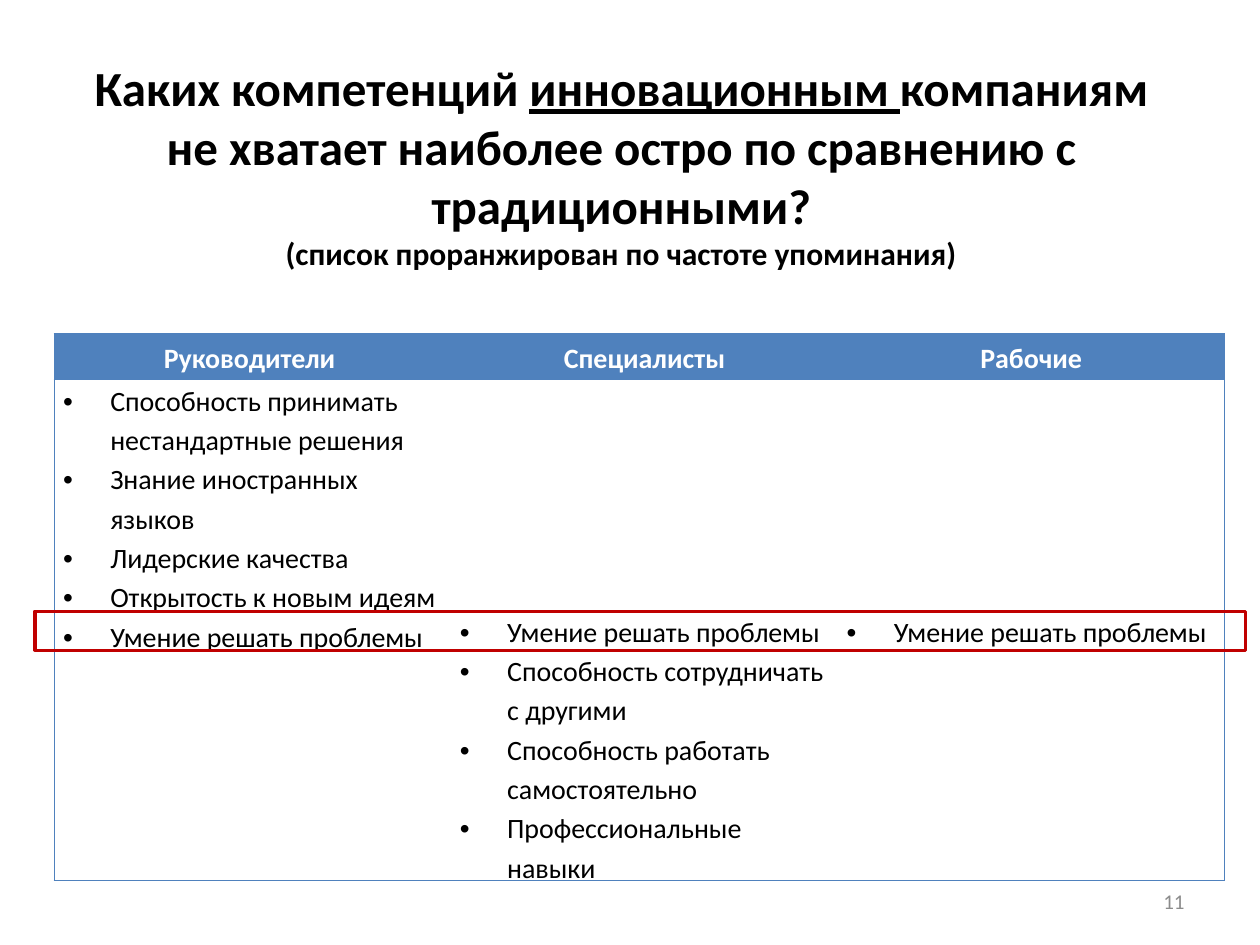
from lxml import etree
from pptx import Presentation
from pptx.dml.color import RGBColor
from pptx.enum.shapes import MSO_SHAPE
from pptx.enum.text import MSO_ANCHOR, MSO_AUTO_SIZE, PP_ALIGN
from pptx.oxml.ns import qn
from pptx.util import Pt

RECT = MSO_SHAPE.RECTANGLE
MIDDLE, TOP = MSO_ANCHOR.MIDDLE, MSO_ANCHOR.TOP
CENTER, LEFT, RIGHT = PP_ALIGN.CENTER, PP_ALIGN.LEFT, PP_ALIGN.RIGHT
NO_FIT = MSO_AUTO_SIZE.NONE

FONT = "Calibri"
HEX = {"blue": "4F81BD", "red": "C00000", "gray": "8C8C8C",
       "black": "000000", "white": "FFFFFF"}

TITLE = [
    (28, [("Каких компетенций ", False), ("инновационным ", True),
          ("компаниям не хватает наиболее остро по сравнению с традиционными?", False)]),
    (18, [("(список проранжирован по частоте упоминания)", False)]),
]
SKILLS = [
    ("Руководители ", 0, [
        "Способность принимать нестандартные решения",
        "Знание иностранных языков",
        "Лидерские качества",
        "Открытость к новым идеям",
        "Умение решать проблемы"]),
    ("Специалисты", 132, [
        "Умение решать проблемы",
        "Способность сотрудничать с другими",
        "Способность работать самостоятельно",
        "Профессиональные навыки"]),
    ("Рабочие", 132, ["Умение решать проблемы"]),
]
PAGE = "11"
WIDTHS = [226.8, 221, 221]
HEIGHTS = [26, 286]
INDENT = 27


def color(name):
    return RGBColor.from_string(HEX[name])


def style(run, size, tint, bold=False, under=False):
    font = run.font
    font.name, font.size, font.bold = FONT, Pt(size), bold
    font.underline = under
    font.color.rgb = color(tint)


def edge(cell, sides):
    props = cell._tc.get_or_add_tcPr()
    for spot, side in enumerate("LRTB"):
        line = etree.Element(qn("a:ln" + side), w=str(Pt(1)))
        if side in sides:
            fill = etree.SubElement(line, qn("a:solidFill"))
            etree.SubElement(fill, qn("a:srgbClr"), val=HEX["blue"])
        else:
            etree.SubElement(line, qn("a:noFill"))
        props.insert(spot, line)


def bullet(para):
    props = para._p.get_or_add_pPr()
    props.set("marL", str(Pt(INDENT)))
    props.set("indent", str(-Pt(INDENT)))
    etree.SubElement(props, qn("a:buFont"), typeface="Arial")
    etree.SubElement(props, qn("a:buChar"), char="•")


def fill_cell(cell, lines, head, drop, sides):
    cell.margin_left = cell.margin_right = Pt(5)
    cell.margin_top, cell.margin_bottom = Pt(drop), Pt(0)
    cell.vertical_anchor = MIDDLE if head else TOP
    if head:
        cell.fill.solid()
        cell.fill.fore_color.rgb = color("blue")
    else:
        cell.fill.background()
    edge(cell, sides)
    frame = cell.text_frame
    frame.text = "\n".join(lines)
    for para in frame.paragraphs:
        para.line_spacing = 1.15
        para.alignment = CENTER if head else LEFT
        if head:
            para.space_after = Pt(6)
        else:
            bullet(para)
        style(para.runs[0], 16, "white" if head else "black", head)


def add_title(slide):
    title = slide.shapes.title
    title.left, title.top, title.width, title.height = Pt(31), Pt(49), Pt(648), Pt(90)
    frame = title.text_frame
    frame.auto_size, frame.vertical_anchor = NO_FIT, MIDDLE
    for row, (size, parts) in enumerate(TITLE):
        para = frame.add_paragraph() if row else frame.paragraphs[0]
        para.alignment = CENTER
        for text, under in parts:
            run = para.add_run()
            run.text = text
            style(run, size, "black", True, under)


def add_grid(slide):
    grid = slide.shapes.add_table(len(HEIGHTS), len(SKILLS), Pt(31), Pt(190.8),
                                  Pt(sum(WIDTHS)), Pt(sum(HEIGHTS))).table
    for row, high in zip(grid.rows, HEIGHTS):
        row.height = Pt(high)
    last = len(SKILLS) - 1
    for col, (head, drop, items) in enumerate(SKILLS):
        grid.columns[col].width = Pt(WIDTHS[col])
        sides = "TB" + ("L" if col == 0 else "") + ("R" if col == last else "")
        fill_cell(grid.cell(0, col), [head], True, 0, sides)
        fill_cell(grid.cell(1, col), items, False, drop, sides)


def add_page(slide):
    box = slide.shapes.add_textbox(Pt(516), Pt(500.5), Pt(168), Pt(28.8))
    frame = box.text_frame
    frame.word_wrap, frame.vertical_anchor = True, MIDDLE
    frame.text = PAGE
    para = frame.paragraphs[0]
    para.alignment = RIGHT
    style(para.runs[0], 12, "gray")


def add_frame(slide):
    frame = slide.shapes.add_shape(RECT, Pt(20), Pt(349.2), Pt(692), Pt(22.4))
    frame.shadow.inherit = False
    frame.fill.background()
    frame.line.color.rgb = color("red")
    frame.line.width = Pt(1.75)


def main():
    deck = Presentation()
    deck.slide_width, deck.slide_height = Pt(720), Pt(540)
    slide = deck.slides.add_slide(deck.slide_layouts[5])
    add_title(slide)
    add_page(slide)
    add_grid(slide)
    add_frame(slide)
    deck.save("out.pptx")


if __name__ == "__main__":
    main()
